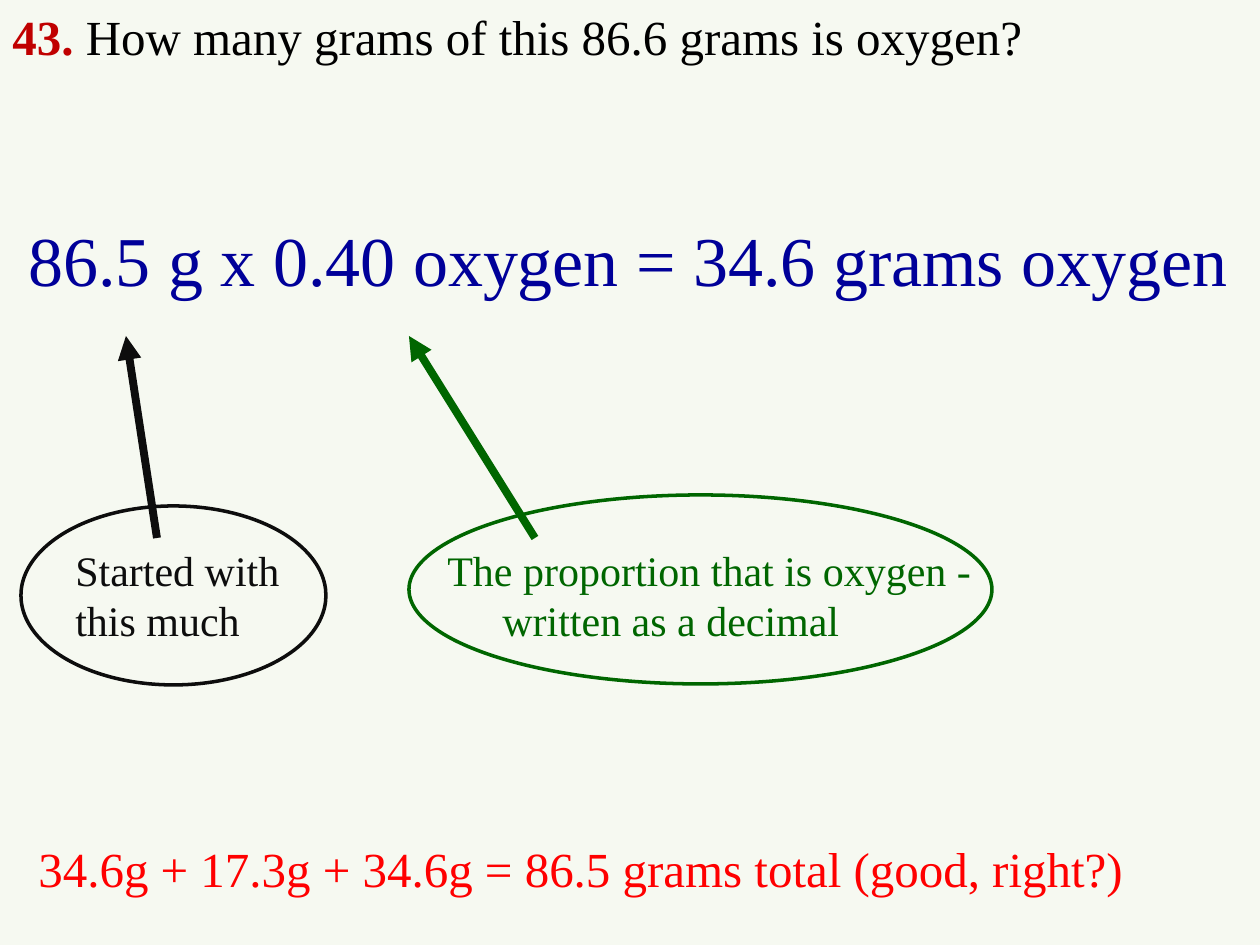
from lxml import etree
from pptx import Presentation
from pptx.dml.color import RGBColor
from pptx.enum import shapes
from pptx.oxml.ns import qn
from pptx import util as u

PX = 914400 // 126
FONT = "Times New Roman"
COLORS = {
    "bg": "F6F9F1",
    "number": "C00000",
    "question": "000000",
    "equation": "000099",
    "start": "0D0D0D",
    "proportion": "006600",
    "check": "FF0000",
}


def rgb(name):
    return RGBColor.from_string(COLORS[name])


prs = Presentation()
prs.slide_width = 1260 * PX
prs.slide_height = 945 * PX
s = prs.slides.add_slide(prs.slide_layouts[6])
s.background.fill.solid()
s.background.fill.fore_color.rgb = rgb("bg")

callouts = [
    ("start", (21, 506, 305, 179), (157, 538), (126, 336)),
    ("proportion", (409, 495, 583, 189), (535, 538), (409, 336)),
]
for color, (x, y, w, h), (x1, y1), (x2, y2) in callouts:
    sp = s.shapes.add_shape(shapes.MSO_SHAPE.OVAL, x * PX, y * PX, w * PX, h * PX)
    sp.shadow.inherit = False
    sp.fill.background()
    sp.line.color.rgb = rgb(color)
    sp.line.width = u.Pt(2)

    arrow = s.shapes.add_connector(
        shapes.MSO_CONNECTOR.STRAIGHT, x1 * PX, y1 * PX, x2 * PX, y2 * PX)
    arrow.line.color.rgb = rgb(color)
    arrow.line.width = u.Pt(4.5)
    etree.SubElement(arrow.line._get_or_add_ln(), qn("a:tailEnd"), type="triangle")
    etree.SubElement(arrow._element.spPr, qn("a:effectLst"))

texts = [
    ((0, 0, 1260, 72), 28, [
        (0, [("43. ", "number", True),
             ("How many grams of this 86.6 grams is oxygen?", "question", False)])]),
    ((16, 210, 1244, 98), 40, [
        (0, [("86.5 g x 0.40 oxygen = 34.6 grams oxygen", "equation", False)])]),
    ((63, 538, 240, 115), 24, [
        (0, [("Started with", "start", False)]),
        (0, [("this much", "start", False)])]),
    ((435, 538, 570, 115), 24, [
        (0, [("The proportion that is oxygen -", "proportion", False)]),
        (55, [("written as a decimal", "proportion", False)])]),
    ((26, 832, 1218, 72), 28, [
        (0, [("34.6g + 17.3g + 34.6g = 86.5 grams total (good, right?)", "check", False)])]),
]
for (x, y, w, h), size, paragraphs in texts:
    tf = s.shapes.add_textbox(x * PX, y * PX, w * PX, h * PX).text_frame
    tf.word_wrap = True
    for i, (indent, runs) in enumerate(paragraphs):
        p = tf.add_paragraph() if i else tf.paragraphs[0]
        if indent:
            p._p.get_or_add_pPr().set("marL", str(indent * PX))
        for words, color, bold in runs:
            r = p.add_run()
            r.text = words
            r.font.name = FONT
            r.font.size = u.Pt(size)
            r.font.bold = bold
            r.font.color.rgb = rgb(color)

prs.save("out.pptx")
